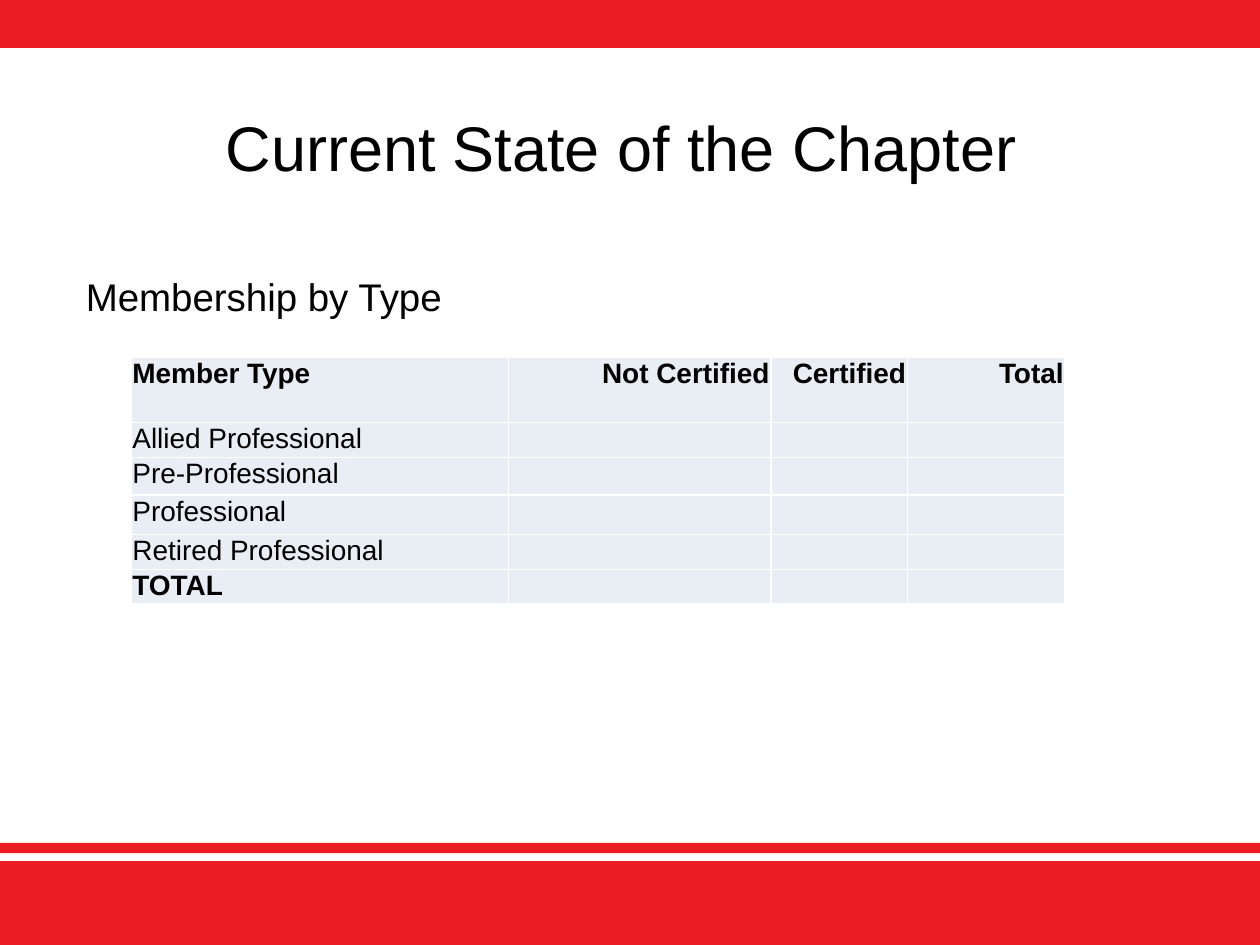
from lxml.etree import SubElement
from pptx import Presentation
from pptx.dml.color import RGBColor
from pptx.enum.shapes import MSO_SHAPE as Shape
from pptx.enum.text import MSO_ANCHOR as Anchor, PP_ALIGN as Align
from pptx.oxml.ns import qn
from pptx.util import Pt

TITLE = "Current State of the Chapter"
SUBTITLE = "Membership by Type"
HEADERS = ["Member Type", "Not Certified", "Certified", "Total"]
MEMBER_TYPES = ["Allied Professional", "Pre-Professional", "Professional",
                "Retired Professional", "TOTAL"]
BOLD_ROWS = (0, len(MEMBER_TYPES))
COLUMN_WIDTHS = [215.5, 150, 78, 90]
ROW_HEIGHTS = [37.5, 18.5, 21.5, 22.5, 20, 19.5]
BANDS = [(0, 26.6, 2), (492, 48, 0), (481.7, 5.8, 0)]  # top, height, outline
SLIDE_WIDTH, SLIDE_HEIGHT = 720, 540

THEME = {
    "font": "Arial", "text": RGBColor(0, 0, 0), "band": RGBColor(0xEC, 0x1C, 0x24),
    "cell": RGBColor(0xE9, 0xED, 0xF4), "border": "FFFFFF",
    "title": 36, "subtitle": 22, "table": 16,
}


def style_paragraph(para, size, align=Align.LEFT, bold=False):
    para.alignment = align
    for span in para.runs:
        span.font.name = THEME["font"]
        span.font.size = Pt(size)
        span.font.bold = bold
        span.font.color.rgb = THEME["text"]


def add_band(slide, top, height, outline):
    band = slide.shapes.add_shape(Shape.RECTANGLE, 0, Pt(top), Pt(SLIDE_WIDTH), Pt(height))
    band.shadow.inherit = False
    band.fill.solid()
    band.fill.fore_color.rgb = THEME["band"]
    if outline:
        band.line.color.rgb = THEME["band"]
        band.line.width = Pt(outline)
    else:
        band.line.fill.background()


def add_text(slide, text, place, size, align=Align.LEFT):
    box = slide.shapes.add_textbox(*map(Pt, place))
    frame = box.text_frame
    frame.word_wrap = True
    frame.text = text
    style_paragraph(frame.paragraphs[0], size, align)
    return frame


def add_borders(cell):
    """Draw thin borders; they must precede the fill in the cell's XML."""
    properties = cell._tc.get_or_add_tcPr()
    for side in ("a:lnL", "a:lnR", "a:lnT", "a:lnB"):
        line = SubElement(properties, qn(side), w=str(Pt(1)))
        fill = SubElement(line, qn("a:solidFill"))
        SubElement(fill, qn("a:srgbClr"), val=THEME["border"])


def fill_cell(cell, text, align, bold):
    cell.margin_left = cell.margin_right = cell.margin_top = Pt(0.7)
    cell.margin_bottom = 0
    add_borders(cell)
    cell.fill.solid()
    cell.fill.fore_color.rgb = THEME["cell"]
    cell.text_frame.text = text
    para = cell.text_frame.paragraphs[0]
    style_paragraph(para, THEME["table"], align, bold)
    if not text:  # an empty cell takes its line height from the end mark
        SubElement(para._p, qn("a:endParaRPr"), sz=str(THEME["table"] * 100))


def add_member_table(slide):
    rows = [HEADERS] + [[name, "", "", ""] for name in MEMBER_TYPES]
    frame = slide.shapes.add_table(len(rows), len(HEADERS), Pt(75), Pt(204),
                                   Pt(sum(COLUMN_WIDTHS)), Pt(sum(ROW_HEIGHTS)))
    table = frame.table
    for column, width in zip(table.columns, COLUMN_WIDTHS):
        column.width = Pt(width)
    for row, height in zip(table.rows, ROW_HEIGHTS):
        row.height = Pt(height)
    for r, texts in enumerate(rows):
        for c, text in enumerate(texts):
            fill_cell(table.cell(r, c), text, Align.RIGHT if c else Align.LEFT, r in BOLD_ROWS)


def main():
    deck = Presentation()
    deck.slide_width, deck.slide_height = Pt(SLIDE_WIDTH), Pt(SLIDE_HEIGHT)
    slide = deck.slides.add_slide(deck.slide_layouts[6])
    for band in BANDS:
        add_band(slide, *band)
    title = add_text(slide, TITLE, (36, 60, 648, 90), THEME["title"], Align.CENTER)
    title.vertical_anchor = Anchor.MIDDLE
    title.margin_bottom, title.margin_right = Pt(46), Pt(17)
    subtitle = add_text(slide, SUBTITLE, (42, 150, 612, 42), THEME["subtitle"])
    subtitle.margin_top = Pt(6)
    add_member_table(slide)
    deck.save("out.pptx")


if __name__ == "__main__":
    main()
